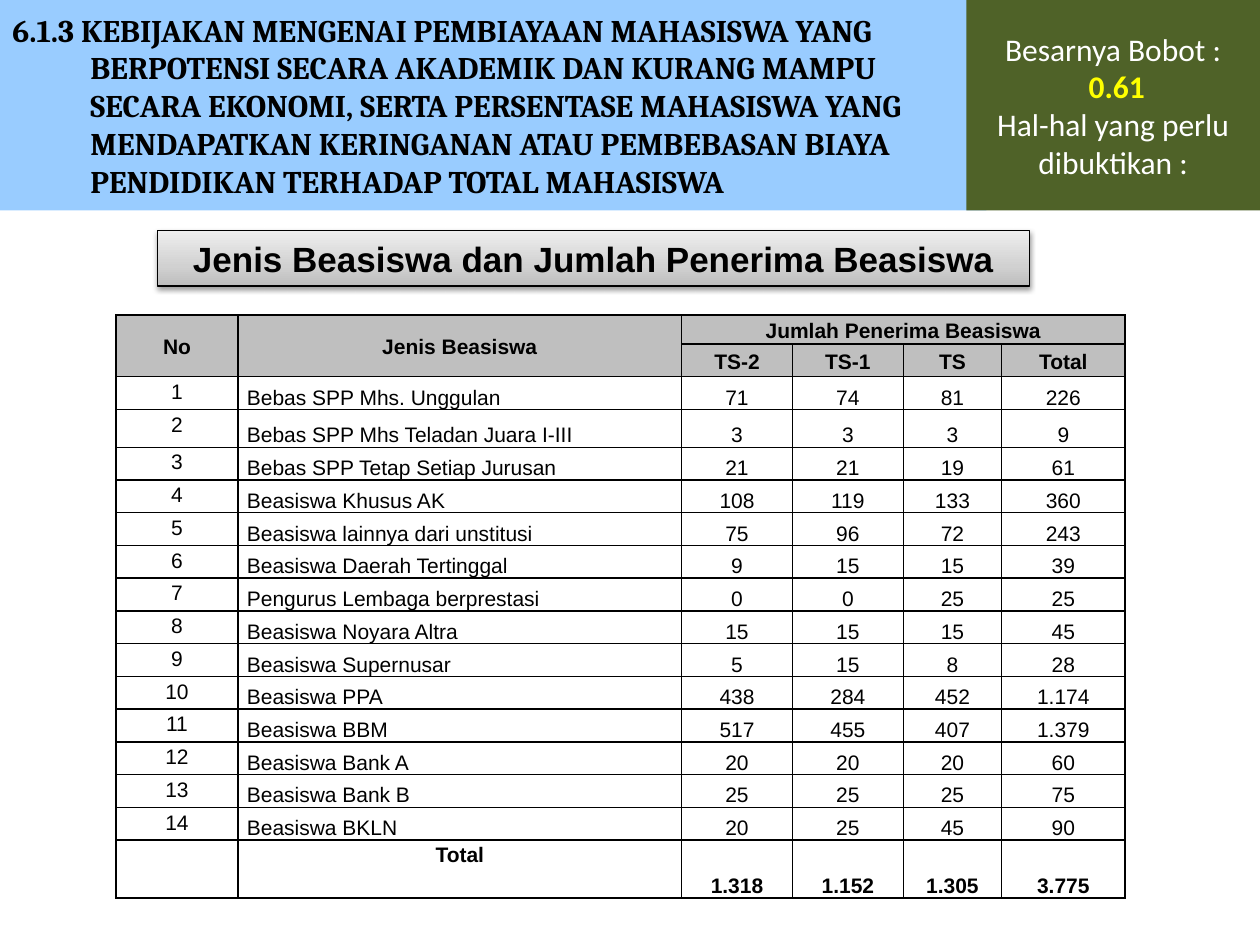
import pptx
import pptx.util
import pptx.oxml
import pptx.oxml.ns
import pptx.dml.color
import pptx.enum.text
import pptx.enum.shapes

Inches, Pt = pptx.util.Inches, pptx.util.Pt
ALIGN = pptx.enum.text.PP_ALIGN
ANCHOR = pptx.enum.text.MSO_ANCHOR
SPACE = pptx.oxml.ns.nsdecls("a")

POLICY = (
    "6.1.3 KEBIJAKAN MENGENAI PEMBIAYAAN MAHASISWA YANG BERPOTENSI SECARA "
    "AKADEMIK DAN KURANG MAMPU SECARA EKONOMI, SERTA PERSENTASE MAHASISWA YANG "
    "MENDAPATKAN KERINGANAN ATAU PEMBEBASAN BIAYA PENDIDIKAN TERHADAP TOTAL MAHASISWA"
)
TITLE = "Jenis Beasiswa dan Jumlah Penerima Beasiswa"
HEADS = [
    ["No", "Jenis Beasiswa", "Jumlah Penerima Beasiswa", "", "", ""],
    ["", "", "TS-2", "TS-1", "TS", "Total"],
]
GRANTS = [
    ("Bebas SPP Mhs. Unggulan", "71", "74", "81", "226"),
    ("Bebas SPP Mhs Teladan Juara I-III", "3", "3", "3", "9"),
    ("Bebas SPP Tetap Setiap Jurusan", "21", "21", "19", "61"),
    ("Beasiswa Khusus AK", "108", "119", "133", "360"),
    ("Beasiswa lainnya dari unstitusi", "75", "96", "72", "243"),
    ("Beasiswa Daerah Tertinggal", "9", "15", "15", "39"),
    ("Pengurus Lembaga berprestasi", "0", "0", "25", "25"),
    ("Beasiswa Noyara Altra", "15", "15", "15", "45"),
    ("Beasiswa Supernusar", "5", "15", "8", "28"),
    ("Beasiswa PPA", "438", "284", "452", "1.174"),
    ("Beasiswa BBM", "517", "455", "407", "1.379"),
    ("Beasiswa Bank A", "20", "20", "20", "60"),
    ("Beasiswa Bank B", "25", "25", "25", "75"),
    ("Beasiswa BKLN", "20", "25", "45", "90"),
]
TOTALS = ["", "Total", "1.318", "1.152", "1.305", "3.775"]
WIDTHS = [0.97, 3.52, 0.88, 0.88, 0.78, 0.98]
HEIGHTS = [0.23, 0.26, 0.26, 0.3] + [0.26] * 12 + [0.46]
STOPS = [(0, "BDBDBD"), (35, "D1D1D1"), (100, "EEEEEE")]

POLICY_FONT = dict(name="Cambria", size=Pt(18), bold=True)
TITLE_FONT = dict(name="Arial", size=Pt(20), bold=True)
WEIGHT_FONT = dict(name="Calibri", size=Pt(18), bold=False)
CELL_FONT = dict(name="Arial", size=Pt(12))
MARGINS = dict(margin_left=Inches(0.07), margin_right=Inches(0.07),
               margin_top=0, margin_bottom=0)


def color(text):
    return pptx.dml.color.RGBColor.from_string(text)


def apply(thing, values):
    for key, value in values.items():
        setattr(thing, key, value)


def write(para, text, font, hue="000000"):
    run = para.add_run()
    run.text = text
    apply(run.font, font)
    run.font.color.rgb = color(hue)


def box(slide, left, top, width, height, fill=None):
    """Add a flat rectangle with a centred first paragraph."""
    shape = slide.shapes.add_shape(
        pptx.enum.shapes.MSO_SHAPE.RECTANGLE,
        Inches(left), Inches(top), Inches(width), Inches(height))
    shape.shadow.inherit = False
    shape.line.fill.background()
    if fill:
        shape.fill.solid()
        shape.fill.fore_color.rgb = color(fill)
    frame = shape.text_frame
    frame.word_wrap = True
    frame.vertical_anchor = ANCHOR.MIDDLE
    frame.paragraphs[0].alignment = ALIGN.CENTER
    return shape


def shade(shape):
    """Give a shape the grey gradient and the soft shadow below it."""
    stops = "".join(f'<a:gs pos="{pos * 1000}"><a:srgbClr val="{hue}"/></a:gs>'
                    for pos, hue in STOPS)
    props = shape.fill._xPr
    props.find(pptx.oxml.ns.qn("a:prstGeom")).addnext(pptx.oxml.parse_xml(
        f'<a:gradFill {SPACE} rotWithShape="1"><a:gsLst>{stops}</a:gsLst>'
        '<a:lin ang="16200000" scaled="0"/></a:gradFill>'))
    props.find(pptx.oxml.ns.qn("a:effectLst")).append(pptx.oxml.parse_xml(
        f'<a:outerShdw {SPACE} blurRad="{Pt(3.1)}" dist="{Pt(1.6)}" dir="5400000" '
        'rotWithShape="0"><a:srgbClr val="000000"><a:alpha val="38000"/>'
        '</a:srgbClr></a:outerShdw>'))


def border(cell):
    props = cell._tc.get_or_add_tcPr()
    for side in "LRTB":
        props.append(pptx.oxml.parse_xml(
            f'<a:ln{side} {SPACE} w="{Pt(1)}"><a:solidFill>'
            f'<a:srgbClr val="000000"/></a:solidFill></a:ln{side}>'))


def fill_table(slide):
    body = [[str(num), *grant] for num, grant in enumerate(GRANTS, 1)]
    rows = HEADS + body + [TOTALS]
    table = slide.shapes.add_table(
        len(rows), len(WIDTHS), Inches(0.92), Inches(2.5),
        Inches(sum(WIDTHS)), Inches(sum(HEIGHTS))).table
    apply(table, dict(first_row=False, horz_banding=False))
    for col, width in zip(table.columns, WIDTHS):
        col.width = Inches(width)
    for row, height in zip(table.rows, HEIGHTS):
        row.height = Inches(height)

    last = len(rows) - 1
    for r, row in enumerate(rows):
        head = r < len(HEADS)
        for c, text in enumerate(row):
            cell = table.cell(r, c)
            border(cell)
            if head:
                cell.fill.solid()
                cell.fill.fore_color.rgb = color("BFBFBF")
                cell.vertical_anchor = ANCHOR.MIDDLE
            else:
                cell.fill.background()
                high = c == 0 or (r == last and c == 1)
                cell.vertical_anchor = ANCHOR.TOP if high else ANCHOR.BOTTOM
            apply(cell, MARGINS)
            para = cell.text_frame.paragraphs[0]
            para.line_spacing = 1.15
            name = c == 1 and not head and r < last
            para.alignment = ALIGN.LEFT if name else ALIGN.CENTER
            if text:
                write(para, text, {**CELL_FONT, "bold": head or r == last})
    for top, left, low, right in [(0, 0, 1, 0), (0, 1, 1, 1), (0, 2, 0, 5)]:
        table.cell(top, left).merge(table.cell(low, right))


def main():
    deck = pptx.Presentation()
    deck.slide_width, deck.slide_height = Inches(10), Inches(7.5)
    slide = deck.slides.add_slide(deck.slide_layouts[6])

    para = box(slide, 0, 0, 7.83, 1.67, "99CCFF").text_frame.paragraphs[0]
    para.alignment = ALIGN.LEFT
    props = para._p.get_or_add_pPr()
    props.set("marL", str(Inches(0.62)))
    props.set("indent", str(-Inches(0.62)))
    write(para, POLICY, POLICY_FONT)

    fill_table(slide)

    title = box(slide, 1.25, 1.83, 6.92, 0.44)
    shade(title)
    title.line.color.rgb = color("000000")
    title.line.width = Pt(0.75)
    write(title.text_frame.paragraphs[0], TITLE, TITLE_FONT)

    frame = box(slide, 7.67, 0, 2.33, 1.67, "4F6228").text_frame
    write(frame.paragraphs[0], "Besarnya Bobot :", WEIGHT_FONT, "FFFFFF")
    score, proof = frame.add_paragraph(), frame.add_paragraph()
    score.alignment = proof.alignment = ALIGN.CENTER
    write(score, " ", WEIGHT_FONT, "FFFFFF")
    write(score, "0.61", {**WEIGHT_FONT, "bold": True}, "FFFF00")
    write(proof, "Hal-hal yang perlu dibuktikan :", WEIGHT_FONT, "FFFFFF")

    deck.save("out.pptx")


if __name__ == "__main__":
    main()
